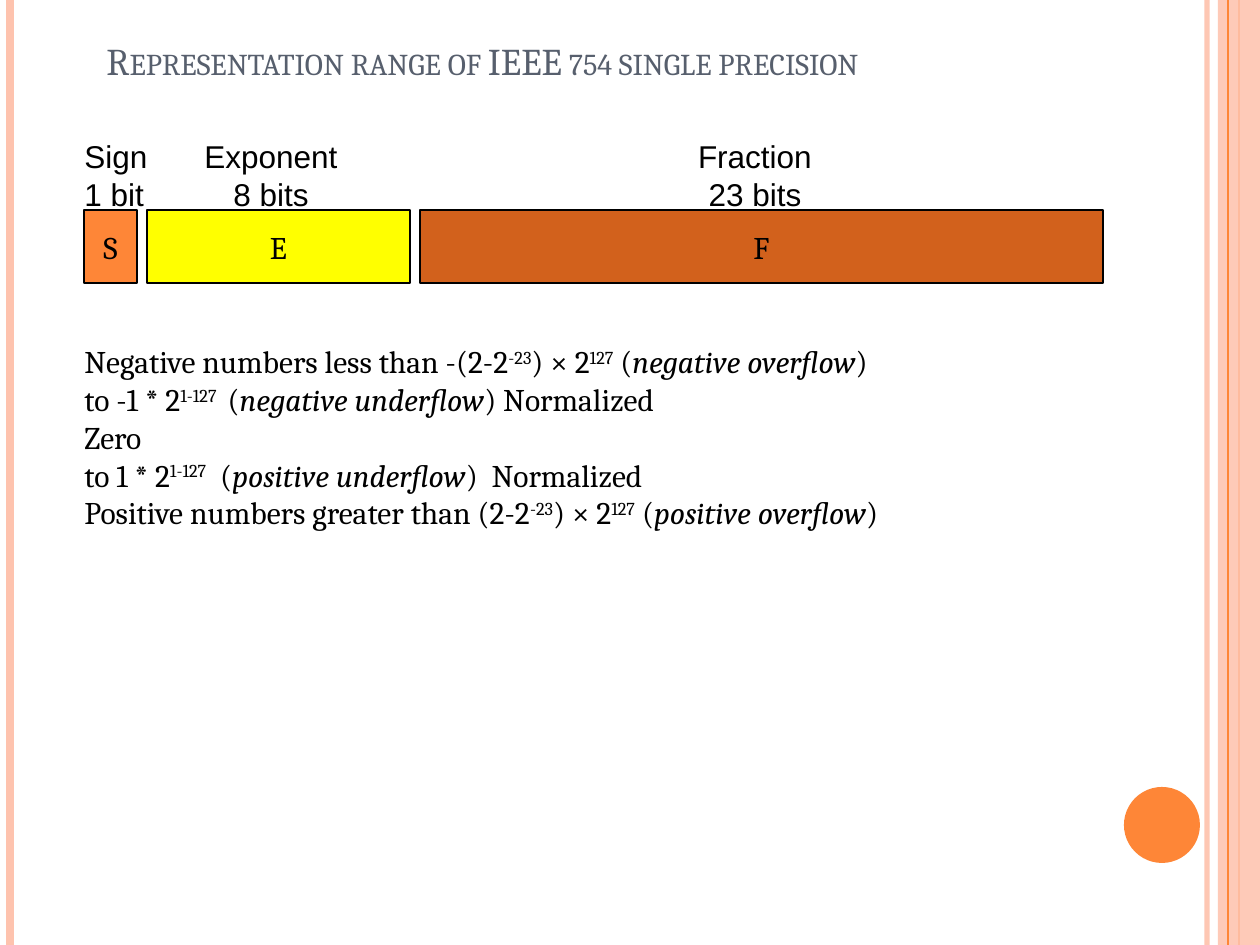
from lxml import etree
from pptx import Presentation, util as u
from pptx.dml.color import RGBColor
from pptx.enum import shapes, text
from pptx.oxml.ns import qn

SCALE = 914400 / 126  # EMU per px


def px(*vals):
    return [u.Emu(round(v * SCALE)) for v in vals]


def paint(fmt, color, alpha=None):
    fmt.solid()
    fmt.fore_color.rgb = RGBColor.from_string(color)
    if alpha:
        clr = fmt._xPr.find(".//" + qn("a:srgbClr"))
        etree.SubElement(clr, qn("a:alpha")).set("val", str(alpha * 1000))


deck = Presentation()
deck.slide_width, deck.slide_height = px(1260, 945)
slide = deck.slides.add_slide(deck.slide_layouts[6])
tree = slide.shapes
LEFT, MID = text.PP_ALIGN.LEFT, text.PP_ALIGN.CENTER
TOP, CORE, BASE = text.MSO_ANCHOR.TOP, text.MSO_ANCHOR.MIDDLE, text.MSO_ANCHOR.BOTTOM
RECT, OVAL = shapes.MSO_SHAPE.RECTANGLE, shapes.MSO_SHAPE.OVAL
PEACH, ORANGE = "FEC3AE", "FE8637"

# Side stripes, right band and circle, back to front
decor = [
    ("line", 1207, 3, PEACH, 93),
    ("line", 10, 4.5, PEACH, None),
    ("line", 1239, 1.5, ORANGE, None),
    (RECT, (1218, 0, 42, 945), 0, PEACH, 87),
    ("line", 1228, 0.75, ORANGE, None),
    (OVAL, (1124, 787, 76, 76), 0, ORANGE, None),
]
for kind, place, width, color, alpha in decor:
    if kind == "line":
        rule = tree.add_connector(shapes.MSO_CONNECTOR.STRAIGHT, *px(place, 0, place, 945))
        rule.line.width = u.Pt(width)
        paint(rule.line.fill, color, alpha)
        etree.SubElement(rule._element.spPr, qn("a:effectLst"))
    else:
        part = tree.add_shape(kind, *px(*place))
        part.shadow.inherit = False
        paint(part.fill, color, alpha)
        part.line.fill.background()

# Text of the range list: "up" is superscript, "it" is italic
ranges = [
    [("Negative numbers less than -(2-2", ""), ("-23", "up"), (") × 2", ""),
     ("127", "up"), (" (", ""), ("negative overflow", "it"), (")", "")],
    [("to -1 * 2", ""), ("1-127 ", "up"), (" (", ""),
     ("negative underflow", "it"), (") Normalized", "")],
    [("Zero", "")],
    [("to 1 * 2", ""), ("1-127", "up"), ("  (", ""),
     ("positive underflow", "it"), (")  Normalized", "")],
    [("Positive numbers greater than (2-2", ""), ("-23", "up"), (") × 2", ""),
     ("127", "up"), (" (", ""), ("positive overflow", "it"), (")", "")],
]

# Title, range list and field headings
title = [[("Representation range of IEEE 754 single precision", "caps")]]
blocks = [
    ((94, 37, 1081, 52), title, 21.6, "Cambria", "575F6D", LEFT, BASE),
    ((72, 336, 1050, 204), ranges, 18, "Cambria", "000000", LEFT, TOP),
]
heads = [(72, 100, "Sign", "1 bit", LEFT), (171, 200, "Exponent", "8 bits", MID),
         (655, 200, "Fraction", "23 bits", MID)]
for x, w, name, size, side in heads:
    blocks.append(((x, 131, w, 88), [[(name, "")], [(size, "")]],
                   18, "Arial", "000000", side, TOP))
jobs = [(tree.add_textbox(*px(*place)), *rest) for place, *rest in blocks]

# Bit fields
for x, w, name, color in [(84, 53, "S", ORANGE), (147, 263, "E", "FFFF00"),
                          (420, 683, "F", "D2611C")]:
    field = tree.add_shape(RECT, *px(x, 210, w, 73))
    field.shadow.inherit = False
    paint(field.fill, color)
    paint(field.line.fill, "000000")
    field.line.width = u.Pt(0.75)
    jobs.append((field, [[(name, "")]], 18, "Cambria", "000000", MID, CORE))

# Fill in all text, run by run
for box, lines, size, face, color, side, anchor in jobs:
    frame = box.text_frame
    frame.word_wrap = True
    frame.vertical_anchor = anchor
    for i, runs in enumerate(lines):
        para = frame.add_paragraph() if i else frame.paragraphs[0]
        para.alignment = side
        for words, style in runs:
            run = para.add_run()
            run.text = words
            font = run.font
            font.size, font.name = u.Pt(size), face
            paint(font.fill, color)
            if style == "it":
                font.italic = True
            elif style == "up":
                font._element.set("baseline", "30000")
            elif style == "caps":
                font._element.set("cap", "small")

deck.save("out.pptx")
